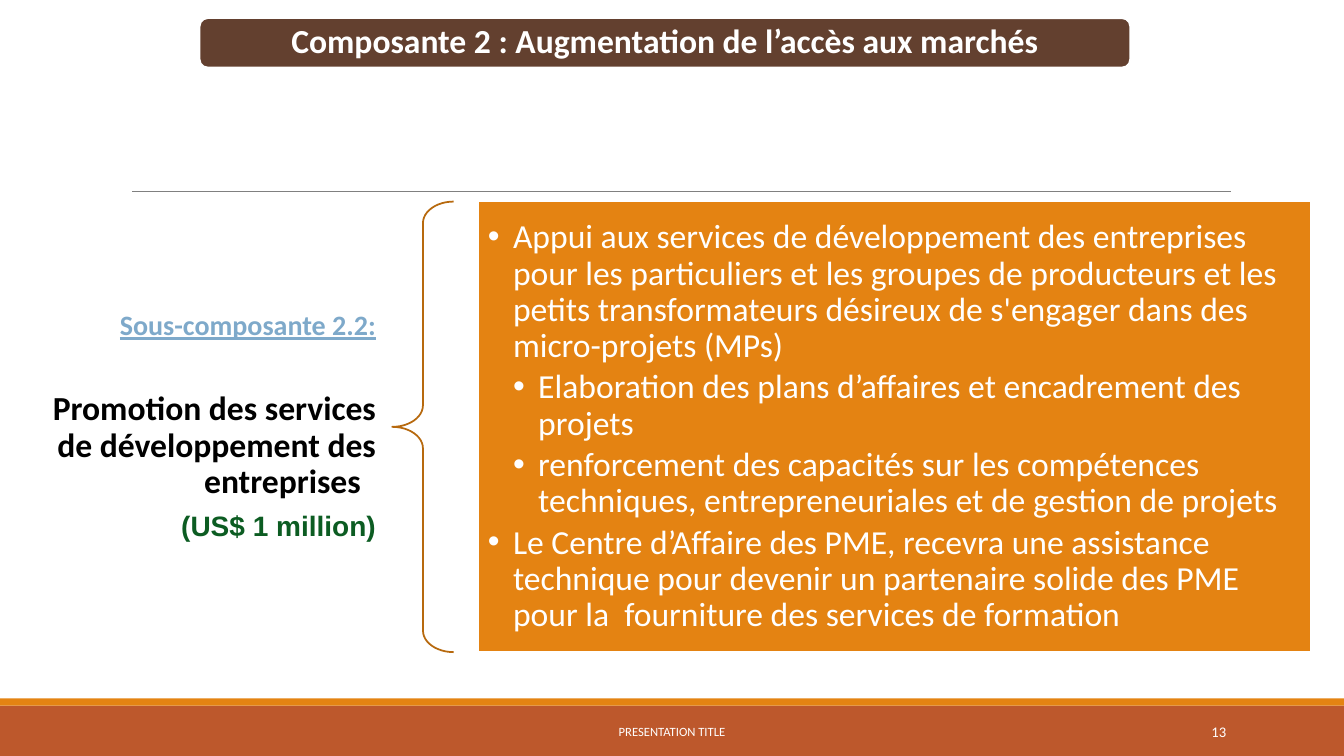
"""Build the slide on sub-component 2.2, business development services."""
from lxml import etree
from pptx import Presentation
from pptx.dml.color import RGBColor
from pptx.enum.shapes import MSO_CONNECTOR, MSO_SHAPE
from pptx.enum.text import MSO_ANCHOR, PP_ALIGN
from pptx.oxml.ns import qn
from pptx.util import Inches, Pt

WHITE = RGBColor(0xFF, 0xFF, 0xFF)
BLACK = RGBColor(0, 0, 0)
RUST = RGBColor(0xBD, 0x58, 0x2C)
ORANGE = RGBColor(0xE4, 0x83, 0x12)
DARK_ORANGE = RGBColor(0xB7, 0x69, 0x0E)
BROWN = RGBColor(0x63, 0x40, 0x2F)
GRAY = RGBColor(0x80, 0x80, 0x80)
BLUE = RGBColor(0x7E, 0xA9, 0xCA)
GREEN = RGBColor(0x0C, 0x5C, 0x22)

TITLE = "Composante 2 : Augmentation de l’accès aux marchés"
BANDS = [((0, 7, 13.33, 0.5), RUST), ((0, 6.93, 13.33, 0.07), ORANGE)]
FOOTERS = [
    ("PRESENTATION TITLE", (4.03, 7.06, 5.27, 0.4), 9, PP_ALIGN.CENTER),
    ("13", (10.83, 7.06, 1.43, 0.4), 10.5, PP_ALIGN.RIGHT),
]
SUBCOMPONENT = [
    ("Sous-composante 2.2:", 20, "Calibri", BLUE, True, 36),
    ("Promotion des services de développement des entreprises  ", 24, "Calibri", BLACK, False, 8.4),
    ("(US$ 1 million)", 20, "Arial", GREEN, False, 7),
]
ACTIVITIES = [
    (1, "Appui aux services de développement des entreprises pour les particuliers et les groupes "
        "de producteurs et les petits transformateurs désireux de s'engager dans des "
        "micro-projets (MPs)"),
    (2, "Elaboration des plans d’affaires et encadrement des projets"),
    (2, "renforcement des capacités sur les compétences techniques, entrepreneuriales et de "
        "gestion de projets"),
    (1, "Le Centre d’Affaire des PME, recevra une assistance technique pour devenir un partenaire "
        "solide des PME pour la  fourniture des services de formation"),
]
INDENT = 0.25
ROW_TOP, ROW_HEIGHT = 2, 4.47


def add_shape(slide, kind, box, fill=None, line=None):
    sp = slide.shapes.add_shape(kind, *map(Inches, box))
    sp.shadow.inherit = False
    if fill is None:
        sp.fill.background()
    else:
        sp.fill.solid()
        sp.fill.fore_color.rgb = fill
    if line is None:
        sp.line.fill.background()
    else:
        sp.line.color.rgb = line
        sp.line.width = Pt(1.25)
    return sp


def setup_frame(sp, side=0.1, edge=0.1):
    tf = sp.text_frame
    tf.word_wrap = True
    tf.vertical_anchor = MSO_ANCHOR.MIDDLE
    tf.margin_left = tf.margin_right = Inches(side)
    tf.margin_top = tf.margin_bottom = Inches(edge)
    return tf


def write(p, text, size, color=WHITE, align=PP_ALIGN.LEFT, font="Calibri", bold=False,
          underline=False, after=0, spacing=0.9):
    p.text = text
    p.alignment = align
    p.line_spacing = spacing
    p.space_after = Pt(after)
    f = p.runs[0].font
    f.size, f.name, f.bold, f.underline = Pt(size), font, bold, underline
    f.color.rgb = color


def next_paragraph(tf, i):
    return tf.add_paragraph() if i else tf.paragraphs[0]


def add_bullet(p, level):
    p.level = level - 1
    pPr = p._p.get_or_add_pPr()
    pPr.set("marL", str(Inches(INDENT * level)))
    pPr.set("indent", str(-Inches(INDENT)))
    etree.SubElement(pPr, qn("a:buFont")).set("typeface", "Arial")
    etree.SubElement(pPr, qn("a:buChar")).set("char", "•")


def add_frame(slide):
    for box, color in BANDS:
        add_shape(slide, MSO_SHAPE.RECTANGLE, box, color)
    rule = slide.shapes.add_connector(
        MSO_CONNECTOR.STRAIGHT, Inches(1.31), Inches(1.9), Inches(12.21), Inches(1.9))
    rule.line.color.rgb = GRAY
    rule.line.width = Pt(0.5)
    etree.SubElement(rule._element.spPr, qn("a:effectLst"))
    for text, box, size, align in FOOTERS:
        tf = setup_frame(slide.shapes.add_textbox(*map(Inches, box)), edge=0.05)
        write(tf.paragraphs[0], text, size, align=align, spacing=1.0)


def add_content(slide):
    title = add_shape(slide, MSO_SHAPE.ROUNDED_RECTANGLE, (1.98, 0.18, 9.23, 0.49), BROWN, WHITE)
    write(setup_frame(title).paragraphs[0], TITLE, 24, align=PP_ALIGN.CENTER, bold=True, after=8.4)

    label = slide.shapes.add_textbox(*map(Inches, (0.33, 2.98, 3.56, 2.51)))
    tf = setup_frame(label, 0.16, 0.06)
    for i, (text, size, font, color, underline, after) in enumerate(SUBCOMPONENT):
        write(next_paragraph(tf, i), text, size, color, PP_ALIGN.RIGHT, font, True,
              underline, after)

    brace = add_shape(slide, MSO_SHAPE.LEFT_BRACE, (3.89, ROW_TOP, 0.61, ROW_HEIGHT),
                      line=DARK_ORANGE)
    brace.adjustments[0] = 0.35
    panel = add_shape(slide, MSO_SHAPE.RECTANGLE, (4.74, ROW_TOP, 8.26, ROW_HEIGHT),
                      ORANGE, WHITE)
    tf = setup_frame(panel)
    for i, (level, text) in enumerate(ACTIVITIES):
        p = next_paragraph(tf, i)
        write(p, text, 24, after=3.6)
        add_bullet(p, level)


def main():
    prs = Presentation()
    prs.slide_width, prs.slide_height = Inches(13.33), Inches(7.5)
    slide = prs.slides.add_slide(prs.slide_layouts[6])
    add_frame(slide)
    add_content(slide)
    prs.save("out.pptx")


if __name__ == "__main__":
    main()
